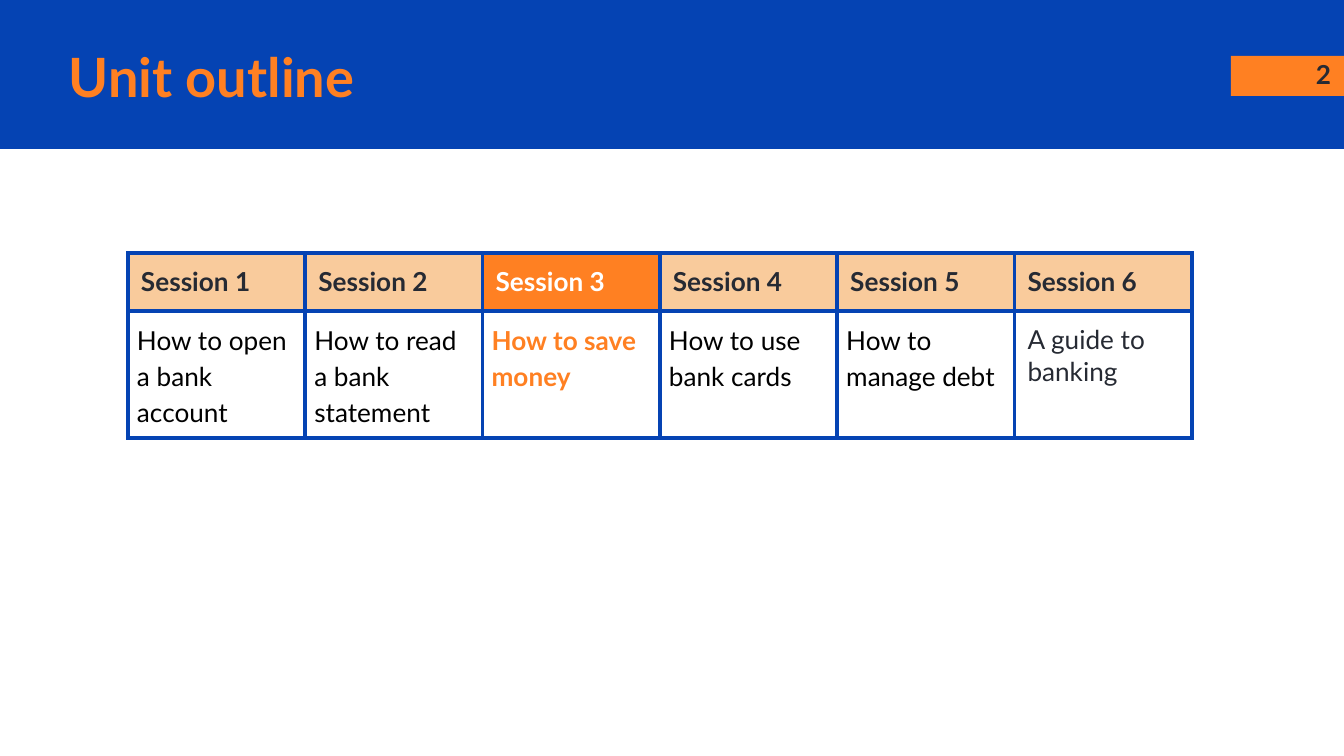
from lxml import etree
from pptx import Presentation
from pptx import util as u
from pptx.dml.color import RGBColor
from pptx.enum import shapes, text
from pptx.oxml.ns import qn

# Content
TITLE = "Unit outline"
PAGE = "2"
SESSIONS = [
    ("Session 1", "How to open a bank account"),
    ("Session 2", "How to read a bank statement"),
    ("Session 3", "How to save money"),
    ("Session 4", "How to use bank cards"),
    ("Session 5", "How to manage debt"),
    ("Session 6", "A guide to banking"),
]
CURRENT = 2
GUIDE = 5  # set tighter than the other sessions

THEME = dict(font="Lato", blue="0543B3", orange="FF8022", peach="F9CB9C",
             dark="262A33", black="000000", white="FFFFFF",
             title=29, body=14, border=2.25)
WIDTH, HEIGHT = 1344, 756
TABLE_LEFT, TABLE_TOP, TABLE_WIDTH = 128, 253, 1064
ROW_HEIGHTS = (58, 127)
WIDE_INSET, NARROW_INSET = 13, 9


def px(n):
    return u.Emu(round(n * 914400 / 134.4))


def rgb(name):
    return RGBColor.from_string(THEME[name])


def style(paragraph, size, color, bold):
    for run in paragraph.runs:
        run.font.name = THEME["font"]
        run.font.size = u.Pt(THEME[size])
        run.font.bold = bold
        run.font.color.rgb = rgb(color)


def set_insets(box, inset):
    box.margin_left = box.margin_right = px(inset)
    box.margin_top = box.margin_bottom = px(inset)


def add_block(slide, color, left, top, width, height):
    block = slide.shapes.add_shape(shapes.MSO_SHAPE.RECTANGLE,
                                   px(left), px(top), px(width), px(height))
    block.shadow.inherit = False
    block.fill.solid()
    block.fill.fore_color.rgb = rgb(color)
    block.line.fill.background()


def add_borders(cell):
    properties = cell._tc.get_or_add_tcPr()
    for side in ("a:lnL", "a:lnR", "a:lnT", "a:lnB"):
        line = etree.SubElement(properties, qn(side),
                                w=str(u.Pt(THEME["border"])))
        fill = etree.SubElement(line, qn("a:solidFill"))
        etree.SubElement(fill, qn("a:srgbClr"), val=THEME["blue"])


def fill_cell(cell, words, color, bold, inset, fill=None, spacing=None):
    cell.text_frame.text = words
    paragraph = cell.text_frame.paragraphs[0]
    paragraph.line_spacing = spacing
    style(paragraph, "body", color, bold)
    set_insets(cell, inset)
    add_borders(cell)
    if fill:
        cell.fill.solid()
        cell.fill.fore_color.rgb = rgb(fill)
    else:
        cell.fill.background()


def add_header(slide):
    add_block(slide, "blue", 0, 0, WIDTH, 149)
    add_block(slide, "orange", 1231, 56, 113, 40)

    # Page number
    number = slide.shapes.add_textbox(px(1263), px(45), px(81), px(58))
    number.text_frame.word_wrap = True
    set_insets(number.text_frame, WIDE_INSET)
    number.text_frame.text = PAGE
    number.text_frame.paragraphs[0].alignment = text.PP_ALIGN.RIGHT
    style(number.text_frame.paragraphs[0], "body", "dark", True)

    # Title, brought in front of the band
    title = slide.shapes.title
    title.left, title.top, title.width, title.height = map(px, (56, 38, 1137, 75))
    frame = title.text_frame
    frame.text = TITLE
    frame.auto_size = text.MSO_AUTO_SIZE.NONE
    frame.vertical_anchor = text.MSO_ANCHOR.MIDDLE
    set_insets(frame, WIDE_INSET)
    frame.paragraphs[0].alignment = text.PP_ALIGN.LEFT
    style(frame.paragraphs[0], "title", "orange", True)
    slide.shapes._spTree.append(title._element)


def add_outline(slide):
    outline = slide.shapes.add_table(
        len(ROW_HEIGHTS), len(SESSIONS), px(TABLE_LEFT), px(TABLE_TOP),
        px(TABLE_WIDTH), px(sum(ROW_HEIGHTS))).table
    for row, height in zip(outline.rows, ROW_HEIGHTS):
        row.height = px(height)
    for i, (session, topic) in enumerate(SESSIONS):
        current, guide = i == CURRENT, i == GUIDE
        outline.columns[i].width = px(TABLE_WIDTH / len(SESSIONS))
        fill_cell(outline.cell(0, i), session, "white" if current else "dark",
                  True, WIDE_INSET, fill="orange" if current else "peach")
        color = "orange" if current else "dark" if guide else "black"
        fill_cell(outline.cell(1, i), topic, color, current,
                  WIDE_INSET if guide else NARROW_INSET,
                  spacing=None if guide else 1.15)


def main():
    deck = Presentation()
    deck.slide_width, deck.slide_height = px(WIDTH), px(HEIGHT)
    slide = deck.slides.add_slide(deck.slide_layouts.get_by_name("Title Only"))
    add_header(slide)
    add_outline(slide)
    deck.save("out.pptx")


if __name__ == "__main__":
    main()
